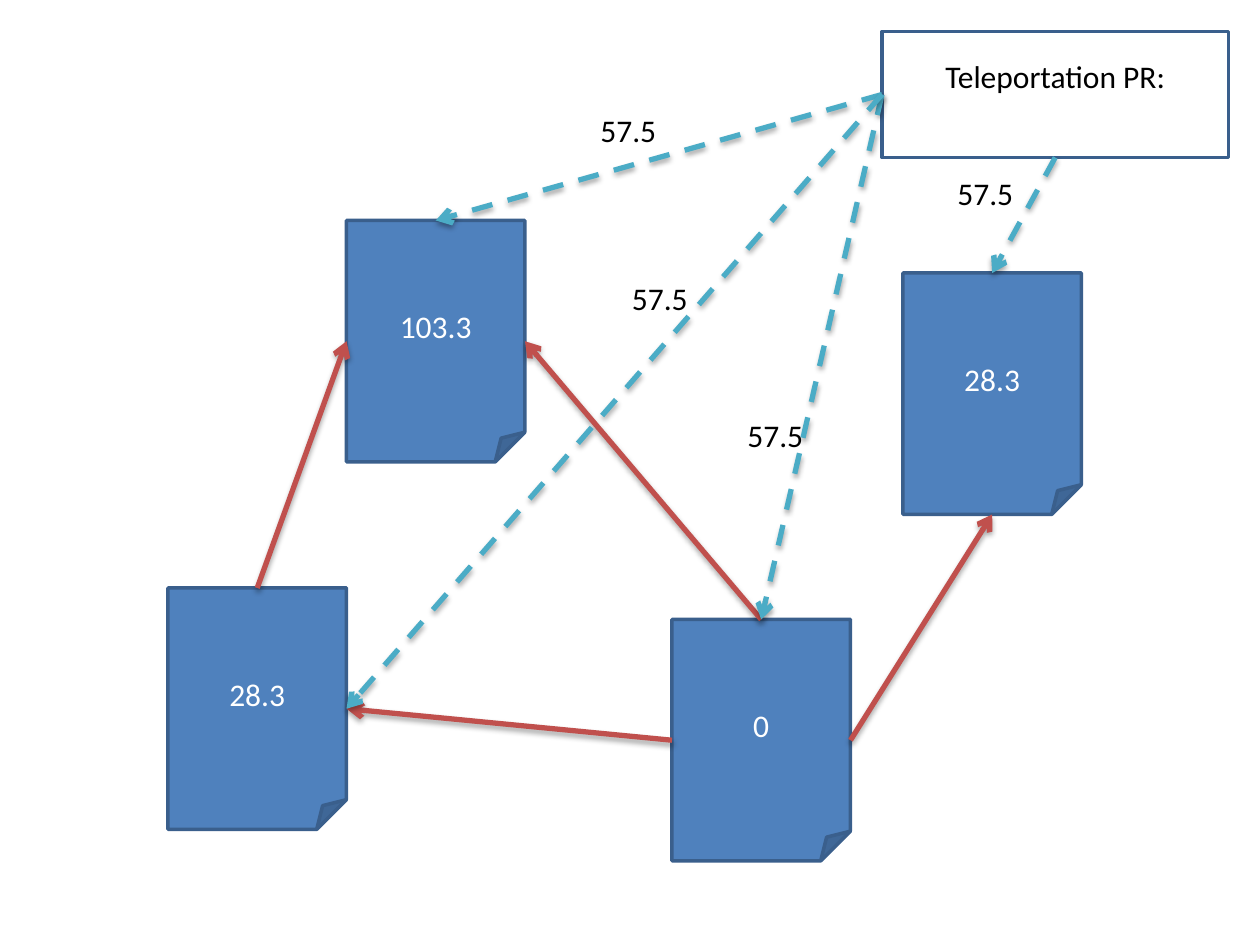
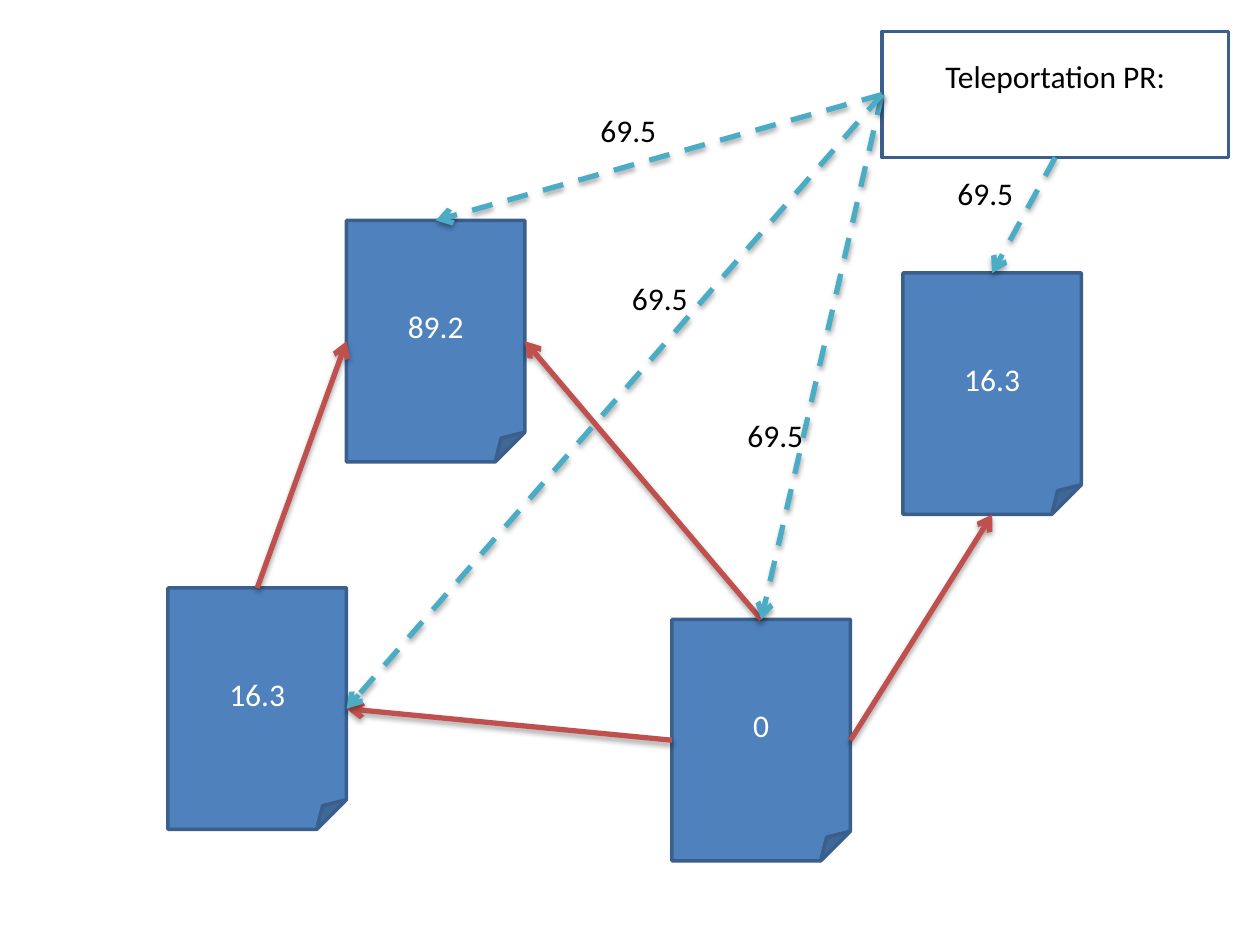
from dataclasses import dataclass
from typing import NamedTuple

from lxml import etree
from pptx import Presentation
from pptx.dml.color import RGBColor
from pptx.enum.dml import MSO_LINE
from pptx.enum.shapes import MSO_CONNECTOR, MSO_SHAPE
from pptx.enum.text import MSO_ANCHOR, MSO_AUTO_SIZE, PP_ALIGN
from pptx.oxml import parse_xml
from pptx.oxml.ns import nsdecls, qn
from pptx.shapes.autoshape import Shape
from pptx.slide import Slide
from pptx.util import Inches, Pt

STRAIGHT = MSO_CONNECTOR.STRAIGHT
DASH = MSO_LINE.DASH
FOLDED_CORNER = MSO_SHAPE.FOLDED_CORNER
RECTANGLE = MSO_SHAPE.RECTANGLE
MIDDLE = MSO_ANCHOR.MIDDLE
TOP_ANCHOR = MSO_ANCHOR.TOP
GROW = MSO_AUTO_SIZE.SHAPE_TO_FIT_TEXT
CENTER, LEFT_ALIGNED = PP_ALIGN.CENTER, PP_ALIGN.LEFT
TOP, LEFT, BOTTOM, RIGHT = range(4)

SLIDE_WIDTH, SLIDE_HEIGHT = Inches(10), Inches(7.5)
COLUMNS, ROWS = 120, 90


@dataclass(frozen=True)
class Theme:
    page: RGBColor = RGBColor.from_string("4F81BD")
    outline: RGBColor = RGBColor.from_string("3A5F8C")
    page_text: RGBColor = RGBColor.from_string("FFFFFF")
    text: RGBColor = RGBColor.from_string("000000")
    link: RGBColor = RGBColor.from_string("C0504D")
    teleport: RGBColor = RGBColor.from_string("4BACC6")
    font: str = "Calibri"
    text_size: Pt = Pt(18)
    outline_width: Pt = Pt(2)
    arrow_width: Pt = Pt(3)


THEME = Theme()


class Area(NamedTuple):
    """Left, top, width and height in grid columns and rows."""
    column: int
    row: int
    columns: int
    rows: int


class Arrow(NamedTuple):
    source: str
    source_side: int
    target: str
    target_side: int


class Iteration(NamedTuple):
    """PageRank values shown on one slide."""
    page_ranks: dict[str, str]
    teleported: str


PAGE_SIZE = (17, 23)
PAGE_AREAS = {
    "lower left": Area(16, 56, *PAGE_SIZE),
    "upper left": Area(33, 21, *PAGE_SIZE),
    "lower right": Area(64, 59, *PAGE_SIZE),
    "upper right": Area(86, 26, *PAGE_SIZE),
}
TELEPORT_BOX = "teleportation"
TELEPORT_AREA = Area(84, 3, 33, 12)
SHARE_AREAS = [Area(column, row, 8, 5)
               for column, row in ((56, 10), (59, 26), (70, 39), (90, 16))]

LINKS = [
    Arrow("lower left", TOP, "upper left", LEFT),
    Arrow("lower right", TOP, "upper left", RIGHT),
    Arrow("lower right", LEFT, "lower left", RIGHT),
    Arrow("lower right", RIGHT, "upper right", BOTTOM),
]
TELEPORTS = [
    Arrow(TELEPORT_BOX, LEFT, "upper left", TOP),
    Arrow(TELEPORT_BOX, BOTTOM, "upper right", TOP),
    Arrow(TELEPORT_BOX, LEFT, "lower right", TOP),
    Arrow(TELEPORT_BOX, LEFT, "lower left", RIGHT),
]

ITERATIONS = [
    Iteration(dict(zip(PAGE_AREAS, ("28.3", "103.3", "0", "28.3"))), "57.5"),
    Iteration(dict(zip(PAGE_AREAS, ("16.3", "89.2", "0", "16.3"))), "69.5"),
]

ARROW_SHADOW = (
    f'<a:effectLst {nsdecls("a")}>'
    f'<a:outerShdw blurRad="{Pt(3.1)}" dist="{Pt(1.8)}" dir="5400000" rotWithShape="0">'
    '<a:srgbClr val="000000"><a:alpha val="35000"/></a:srgbClr>'
    '</a:outerShdw></a:effectLst>'
)


def apply_format(target: object, values: dict[str, object]) -> None:
    for attribute, value in values.items():
        setattr(target, attribute, value)


def place(area: Area) -> tuple[int, int, int, int]:
    """Turn a grid area into slide lengths."""
    return (SLIDE_WIDTH * area.column // COLUMNS, SLIDE_HEIGHT * area.row // ROWS,
            SLIDE_WIDTH * area.columns // COLUMNS, SLIDE_HEIGHT * area.rows // ROWS)


def write(shape: Shape, text: str, color: RGBColor, alignment: PP_ALIGN,
          frame_format: dict[str, object]) -> None:
    frame = shape.text_frame
    apply_format(frame, frame_format)
    paragraph = frame.paragraphs[0]
    paragraph.alignment = alignment
    run = paragraph.add_run()
    run.text = text
    apply_format(run.font, {"name": THEME.font, "size": THEME.text_size})
    run.font.color.rgb = color


def add_outlined(slide: Slide, preset: MSO_SHAPE, area: Area) -> Shape:
    shape = slide.shapes.add_shape(preset, *place(area))
    shape.shadow.inherit = False
    shape.line.color.rgb = THEME.outline
    shape.line.width = THEME.outline_width
    return shape


def add_page(slide: Slide, area: Area, rank: str) -> Shape:
    page = add_outlined(slide, FOLDED_CORNER, area)
    page.fill.solid()
    page.fill.fore_color.rgb = THEME.page
    write(page, rank, THEME.page_text, CENTER,
          {"word_wrap": True, "vertical_anchor": MIDDLE})
    return page


def add_teleport_box(slide: Slide) -> Shape:
    box = add_outlined(slide, RECTANGLE, TELEPORT_AREA)
    box.fill.background()
    write(box, "Teleportation PR:", THEME.text, CENTER,
          {"word_wrap": True, "vertical_anchor": MIDDLE, "margin_bottom": Inches(0.35)})
    return box


def add_share(slide: Slide, area: Area, share: str) -> None:
    write(slide.shapes.add_textbox(*place(area)), share, THEME.text, LEFT_ALIGNED,
          {"word_wrap": False, "vertical_anchor": TOP_ANCHOR, "auto_size": GROW})


def add_arrow(slide: Slide, nodes: dict[str, Shape], arrow: Arrow,
              color: RGBColor, dash: MSO_LINE | None = None) -> None:
    connector = slide.shapes.add_connector(STRAIGHT, 0, 0, 0, 0)
    connector.begin_connect(nodes[arrow.source], arrow.source_side)
    connector.end_connect(nodes[arrow.target], arrow.target_side)
    connector.line.color.rgb = color
    apply_format(connector.line, {"width": THEME.arrow_width, "dash_style": dash})
    outline = connector.line._get_or_add_ln()
    etree.SubElement(outline, qn("a:tailEnd"), type="arrow")
    outline.getparent().append(parse_xml(ARROW_SHADOW))


def add_graph(slide: Slide, iteration: Iteration) -> None:
    """Draw the page graph with the values of one iteration."""
    nodes = {page: add_page(slide, area, iteration.page_ranks[page])
             for page, area in PAGE_AREAS.items()}
    nodes[TELEPORT_BOX] = add_teleport_box(slide)
    for link in LINKS:
        add_arrow(slide, nodes, link, THEME.link)
    for teleport in TELEPORTS:
        add_arrow(slide, nodes, teleport, THEME.teleport, DASH)
    for area in SHARE_AREAS:
        add_share(slide, area, iteration.teleported)


def main() -> None:
    presentation = Presentation()
    apply_format(presentation, {"slide_width": SLIDE_WIDTH, "slide_height": SLIDE_HEIGHT})
    blank = presentation.slide_layouts[6]
    for iteration in ITERATIONS:
        add_graph(presentation.slides.add_slide(blank), iteration)
    presentation.save("out.pptx")


if __name__ == "__main__":
    main()
